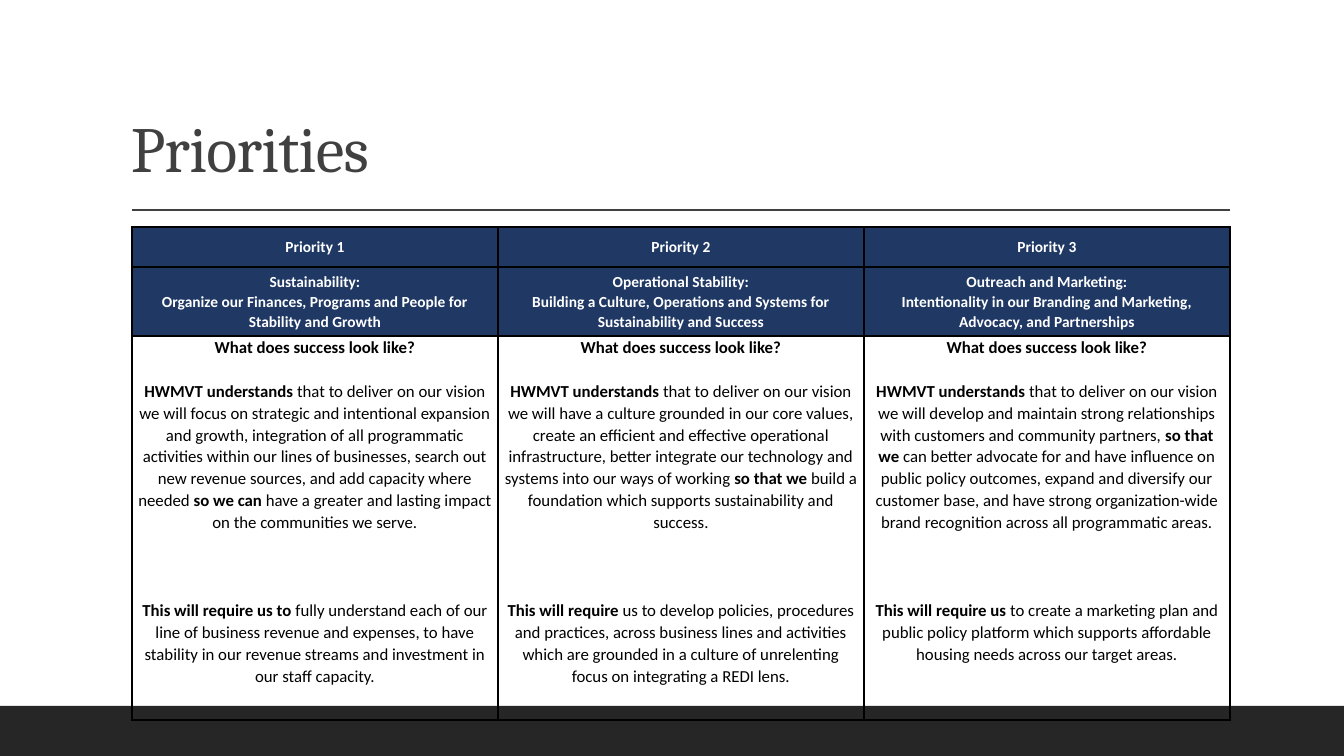
from lxml.etree import SubElement
from pptx import Presentation
from pptx.dml.color import RGBColor
from pptx.enum.shapes import MSO_CONNECTOR, MSO_SHAPE
from pptx.enum.text import MSO_ANCHOR as ANCHOR, PP_ALIGN as ALIGN
from pptx.oxml.ns import qn
from pptx.util import Emu, Pt

TITLE = "Priorities"
SUCCESS = "What does success look like?"
# Text between ** marks is bold.
PRIORITIES = [
    {
        "label": "Priority 1",
        "theme": ["Sustainability:",
                  "Organize our Finances, Programs and People for Stability and Growth"],
        "vision": "**HWMVT understands** that to deliver on our vision we will focus on "
                  "strategic and intentional expansion and growth, integration of all "
                  "programmatic activities within our lines of businesses, search out new "
                  "revenue sources, and add capacity where needed **so we can** have a "
                  "greater and lasting impact on the communities we serve.",
        "needs": "**This will require us to** fully understand each of our line of business "
                 "revenue and expenses, to have stability in our revenue streams and "
                 "investment in our staff capacity.",
    },
    {
        "label": "Priority 2",
        "theme": ["Operational Stability:",
                  "Building a Culture, Operations and Systems for Sustainability and Success"],
        "vision": "**HWMVT understands** that to deliver on our vision we will have a culture "
                  "grounded in our core values, create an efficient and effective operational "
                  "infrastructure, better integrate our technology and systems into our ways "
                  "of working **so that we** build a foundation which supports sustainability "
                  "and success.",
        "needs": "**This will require** us to develop policies, procedures and practices, "
                 "across business lines and activities which are grounded in a culture of "
                 "unrelenting focus on integrating a REDI lens.",
    },
    {
        "label": "Priority 3",
        "theme": ["Outreach and Marketing:",
                  "Intentionality in our Branding and Marketing, Advocacy, and Partnerships"],
        "vision": "**HWMVT understands** that to deliver on our vision we will develop and "
                  "maintain strong relationships with customers and community partners, "
                  "**so that we** can better advocate for and have influence on public policy "
                  "outcomes, expand and diversify our customer base, and have strong "
                  "organization-wide brand recognition across all programmatic areas.",
        "needs": "**This will require us** to create a marketing plan and public policy "
                 "platform which supports affordable housing needs across our target areas.",
    },
]

SLIDE_W, SLIDE_H = 1344, 756
BAR_TOP = 706
LEFT, COLUMN_W = 132, 366
RULE_Y, TABLE_TOP = 210, 227
ROW_HEIGHTS = [40, 69, 384]
LINE = 15.7  # height of one body line in points
NAVY, WHITE, BLACK, GREY, BAR = "1F3864", "FFFFFF", "000000", "404040", "262626"
HEADER = {"size": Pt(11), "name": "Calibri", "color": WHITE}
BODY = {"size": Pt(12), "name": "Calibri", "color": BLACK}
HEADING = {"size": Pt(46), "name": "Cambria", "color": GREY}
CELL = {"margin_left": 6, "margin_right": 6, "margin_top": 0, "margin_bottom": 0}


def px(length):
    return Emu(round(length * 914400 / 100.8))


def rgb(value):
    return RGBColor.from_string(value)


def add_run(paragraph, text, look, bold=False):
    run = paragraph.add_run()
    run.text = text
    run.font.bold = bold
    for key, value in look.items():
        if key == "color":
            run.font.color.rgb = rgb(value)
        else:
            setattr(run.font, key, value)
    return run


def fill_cell(cell, paragraphs, look, anchor, fill):
    """Write (text, space before in points) pairs into a bordered cell."""
    for side, margin in CELL.items():
        setattr(cell, side, px(margin))
    cell.vertical_anchor = anchor
    frame = cell.text_frame
    for index, (text, space) in enumerate(paragraphs):
        paragraph = frame.add_paragraph() if index else frame.paragraphs[0]
        paragraph.alignment = ALIGN.CENTER
        paragraph.line_spacing = 1.07
        paragraph.space_before = Pt(space)
        for part, words in enumerate(text.split("**")):
            if words:
                add_run(paragraph, words, look, bold=part % 2 == 1)
    properties = cell._tc.get_or_add_tcPr()
    for edge in ("a:lnL", "a:lnR", "a:lnT", "a:lnB"):
        border = SubElement(properties, qn(edge), w=str(Pt(1)))
        SubElement(SubElement(border, qn("a:solidFill")), qn("a:srgbClr"), val=BLACK)
    if fill:
        cell.fill.solid()
        cell.fill.fore_color.rgb = rgb(fill)
    else:
        cell.fill.background()


def add_frame(slide):
    """Draw the bottom bar and the rule under the title."""
    bar = slide.shapes.add_shape(MSO_SHAPE.RECTANGLE, 0, px(BAR_TOP),
                                 px(SLIDE_W), px(SLIDE_H - BAR_TOP))
    bar.shadow.inherit = False
    bar.fill.solid()
    bar.fill.fore_color.rgb = rgb(BAR)
    bar.line.fill.background()
    right = LEFT + COLUMN_W * len(PRIORITIES)
    rule = slide.shapes.add_connector(MSO_CONNECTOR.STRAIGHT, px(LEFT), px(RULE_Y),
                                      px(right), px(RULE_Y))
    rule.line.color.rgb = rgb(GREY)
    rule.line.width = Pt(1)
    SubElement(rule._element.spPr, qn("a:effectLst"))


def add_title(slide):
    frame = slide.shapes.add_textbox(px(121), px(31), px(1109), px(160)).text_frame
    frame.word_wrap = True
    frame.vertical_anchor = ANCHOR.BOTTOM
    frame.paragraphs[0].line_spacing = 0.9
    run = add_run(frame.paragraphs[0], TITLE, HEADING)
    run.font._element.set("spc", "-50")


def add_priorities(slide):
    count = len(PRIORITIES)
    table = slide.shapes.add_table(len(ROW_HEIGHTS), count, px(LEFT), px(TABLE_TOP),
                                   px(COLUMN_W * count), px(sum(ROW_HEIGHTS))).table
    table.first_row = table.horz_banding = False
    for row, height in zip(table.rows, ROW_HEIGHTS):
        row.height = px(height)
    for column, priority in enumerate(PRIORITIES):
        table.columns[column].width = px(COLUMN_W)
        label = [(f"**{priority['label']}**", 0)]
        theme = [(f"**{line}**", 0) for line in priority["theme"]]
        success = [(f"**{SUCCESS}**", 0), (priority["vision"], LINE),
                   (priority["needs"], 3 * LINE)]
        fill_cell(table.cell(0, column), label, HEADER, ANCHOR.MIDDLE, NAVY)
        fill_cell(table.cell(1, column), theme, HEADER, ANCHOR.MIDDLE, NAVY)
        fill_cell(table.cell(2, column), success, BODY, ANCHOR.TOP, None)


def main():
    deck = Presentation()
    deck.slide_width, deck.slide_height = px(SLIDE_W), px(SLIDE_H)
    slide = deck.slides.add_slide(deck.slide_layouts[6])
    add_frame(slide)
    add_title(slide)
    add_priorities(slide)
    deck.save("out.pptx")


if __name__ == "__main__":
    main()
